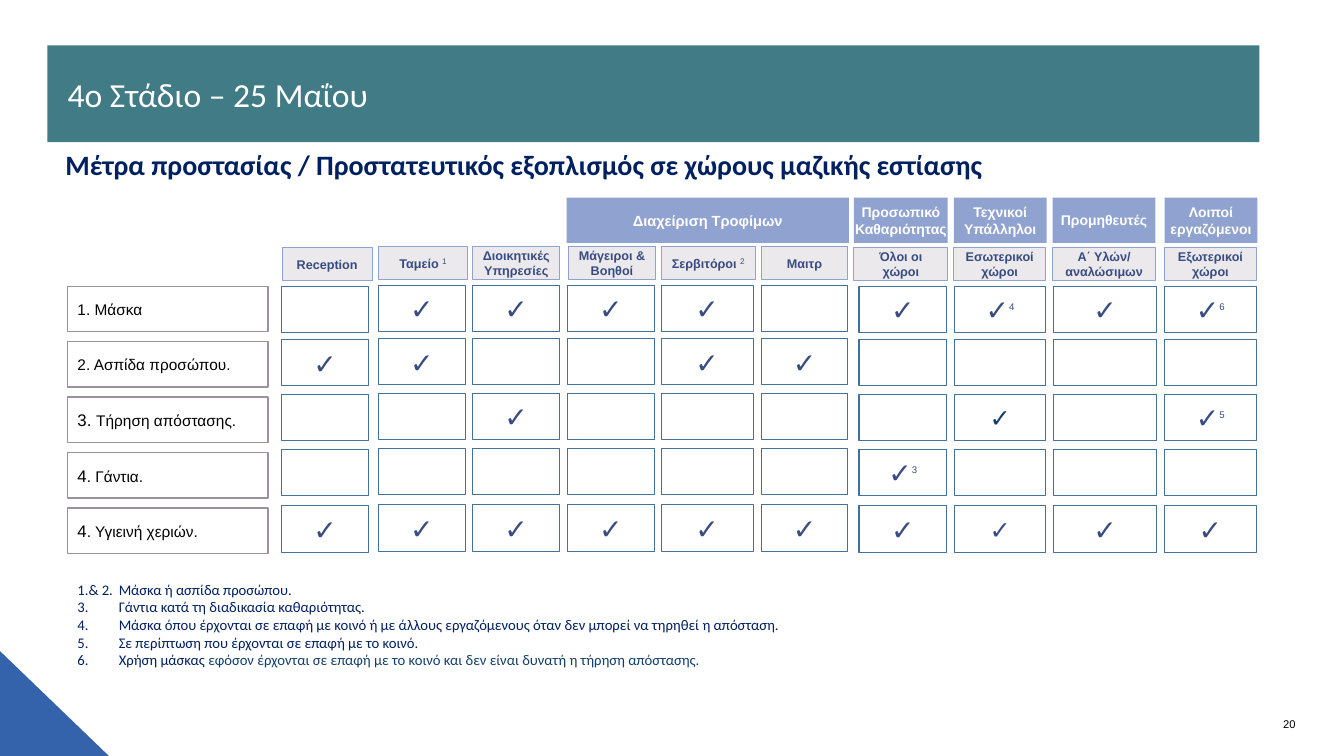
from lxml import etree
from pptx import Presentation
from pptx.dml.color import RGBColor
from pptx.enum.shapes import MSO_SHAPE
from pptx.enum.text import MSO_ANCHOR, MSO_AUTO_SIZE, PP_ALIGN
from pptx.oxml.ns import qn
from pptx.util import Inches, Pt

RECT, TRIANGLE = MSO_SHAPE.RECTANGLE, MSO_SHAPE.RIGHT_TRIANGLE
MIDDLE, BOTTOM = MSO_ANCHOR.MIDDLE, MSO_ANCHOR.BOTTOM
LEFT, CENTER, RIGHT = PP_ALIGN.LEFT, PP_ALIGN.CENTER, PP_ALIGN.RIGHT

WHITE = RGBColor(0xFF, 0xFF, 0xFF)
BLACK = RGBColor(0, 0, 0)
TEAL = RGBColor(0x41, 0x7B, 0x85)
NAVY = RGBColor(0x00, 0x20, 0x60)
BLUE = RGBColor(0x34, 0x62, 0xAB)
INK = RGBColor(0x38, 0x4C, 0x81)
DARK_BLUE = RGBColor(0x14, 0x3F, 0x6A)
PERIWINKLE = RGBColor(0x90, 0xA2, 0xCF)
PALE = RGBColor(0xEB, 0xE9, 0xEC)
MAUVE = RGBColor(0x9D, 0x90, 0xA0)
STEEL = RGBColor(0x41, 0x71, 0x9C)


def add_box(left, top, width, height, fill, line=None, line_width=0.75, kind=RECT):
    s = slide.shapes.add_shape(kind, Inches(left), Inches(top), Inches(width), Inches(height))
    s.shadow.inherit = False
    s.fill.solid()
    s.fill.fore_color.rgb = fill
    if line is None:
        s.line.fill.background()
    else:
        s.line.color.rgb = line
        s.line.width = Pt(line_width)
    s.text_frame.vertical_anchor = MIDDLE
    return s


def add_run(p, text, size, color, bold=False, font="Arial", baseline=0):
    """Append a formatted run; baseline is the superscript rise in percent."""
    r = p.add_run()
    r.text = text
    r.font.name, r.font.size, r.font.bold = font, Pt(size), bold
    r.font.color.rgb = color
    if baseline:
        r.font._element.set("baseline", str(baseline * 1000))


prs = Presentation()
prs.slide_width, prs.slide_height = Inches(13.33), Inches(7.5)
slide = prs.slides.add_slide(prs.slide_layouts[5])

# Title banner
title = slide.shapes.title
title.left, title.top, title.width, title.height = (Inches(v) for v in (0.47, 0.45, 12.02, 0.96))
geometry = etree.SubElement(title._element.spPr, qn("a:prstGeom"), prst="snip2DiagRect")
etree.SubElement(geometry, qn("a:avLst"))
title.fill.solid()
title.fill.fore_color.rgb = TEAL
tf = title.text_frame
tf.auto_size = MSO_AUTO_SIZE.NONE
tf.vertical_anchor = MIDDLE
tf.margin_left = tf.margin_right = Inches(0.2)
tf.paragraphs[0].alignment = LEFT
add_run(tf.paragraphs[0], "4o Στάδιο – 25 Μαΐου", 24, WHITE, font="Calibri")

# Corner, subtitle and page number
add_box(0, 6.46, 1.08, 1.04, BLUE, kind=TRIANGLE)

subtitle = slide.shapes.add_textbox(Inches(0.55), Inches(1.41), Inches(11.73), Inches(0.44))
subtitle.text_frame.word_wrap = True
add_run(subtitle.text_frame.paragraphs[0],
        "Μέτρα προστασίας / Προστατευτικός εξοπλισμός σε χώρους μαζικής εστίασης",
        20, NAVY, bold=True, font="Calibri")

number = slide.shapes.add_textbox(Inches(10.92), Inches(7.1), Inches(1.93), Inches(0.15))
tf = number.text_frame
tf.word_wrap = True
tf.vertical_anchor = BOTTOM
tf.margin_left = tf.margin_right = tf.margin_top = tf.margin_bottom = 0
tf.paragraphs[0].alignment = RIGHT
add_run(tf.paragraphs[0], "20", 8, BLACK)

# Staff groups
groups = [
    (5.62, 2.8, "Διαχείριση Τροφίμων", 10.5),
    (8.47, 0.93, "Προσωπικό Καθαριότητας", 10),
    (9.46, 0.92, "Τεχνικοί Υπάλληλοι", 10),
    (10.44, 1.02, "Προμηθευτές", 10),
    (11.55, 0.92, "Λοιποί εργαζόμενοι", 10),
]
for left, width, name, size in groups:
    tf = add_box(left, 1.96, width, 0.45, PERIWINKLE).text_frame
    tf.margin_left = tf.margin_right = tf.margin_top = tf.margin_bottom = 0
    tf.paragraphs[0].alignment = CENTER
    add_run(tf.paragraphs[0], name, size, WHITE, bold=True)

# Measures: number and name, with the size of the number
measures = [
    ("1", ". Μάσκα", 11),
    ("2", ". Ασπίδα προσώπου.", 11),
    ("3. ", "Τήρηση απόστασης.", 12),
    ("4", ". Γάντια.", 12),
    ("4", ". Υγιεινή χεριών.", 12),
]
for i, (digit, name, size) in enumerate(measures):
    s = add_box(0.67, 2.84 + 0.55 * i, 1.99, 0.45, WHITE, MAUVE, 1)
    p = s.text_frame.paragraphs[0]
    p.alignment = LEFT
    add_run(p, digit, size, BLACK)
    add_run(p, name, 11, BLACK)

# Roles: header left and width, cell left and width, shift down, name, note, marks by row
ROW_TOPS = (2.83, 3.36, 3.9, 4.45, 5.01)
SMALL_MARKS = {("Εσωτερικοί χώροι", 2): DARK_BLUE, ("Εσωτερικοί χώροι", 4): INK}
roles = [
    (2.8, 0.89, 2.79, 0.87, 0.01, "Reception", "", ("", "✓", "", "", "✓")),
    (3.75, 0.89, 3.75, 0.87, 0, "Ταμείο ", "1", ("✓", "✓", "", "", "✓")),
    (4.69, 0.86, 4.69, 0.86, 0, "Διοικητικές Υπηρεσίες", "", ("✓", "", "✓", "", "✓")),
    (5.64, 0.86, 5.63, 0.86, 0, "Μάγειροι & Βοηθοί", "", ("✓", "", "", "", "✓")),
    (6.56, 0.93, 6.56, 0.91, 0, "Σερβιτόροι ", "2", ("✓", "✓", "", "", "✓")),
    (7.55, 0.86, 7.55, 0.86, 0, "Μαιτρ", "", ("", "✓", "", "", "✓")),
    (8.47, 0.93, 8.52, 0.87, 0.01, "Όλοι οι χώροι", "", ("✓", "", "", "✓3", "✓")),
    (9.46, 0.91, 9.47, 0.9, 0.01, "Εσωτερικοί χώροι", "", ("✓4", "", "✓", "", "✓")),
    (10.44, 1.02, 10.45, 1.02, 0.01, "Α΄ Υλών/ αναλώσιμων", "", ("✓", "", "", "", "✓")),
    (11.55, 0.91, 11.55, 0.91, 0.01, "Εξωτερικοί χώροι", "", ("✓6", "", "✓5", "", "✓")),
]
for head_left, head_width, left, width, shift, name, note, marks in roles:
    p = add_box(head_left, 2.45 + shift, head_width, 0.32, PALE, PERIWINKLE).text_frame.paragraphs[0]
    p.alignment = CENTER
    add_run(p, name, 9, INK, bold=True)
    if note:
        add_run(p, note, 10, INK, baseline=30)
    for row, (top, mark) in enumerate(zip(ROW_TOPS, marks)):
        s = add_box(left, top + shift, width, 0.46, WHITE, STEEL)
        if mark:
            small = SMALL_MARKS.get((name, row))
            p = s.text_frame.paragraphs[0]
            p.alignment = CENTER
            add_run(p, mark[0], 18 if small else 20, small or INK)
            if mark[1:]:
                add_run(p, mark[1:], 12, INK, baseline=60)

# Footnotes: the first carries its own numbers, the rest count from 3
footnotes = [
    ("1.& 2.\tΜάσκα ή ασπίδα προσώπου.", ""),
    ("Γάντια κατά τη διαδικασία καθαριότητας.", ""),
    ("Μάσκα όπου έρχονται σε επαφή με κοινό ή με άλλους εργαζόμενους "
     "όταν δεν μπορεί να τηρηθεί η απόσταση.", ""),
    ("Σε περίπτωση που έρχονται σε επαφή με το κοινό.", ""),
    ("Χρήση μάσκας ",
     "εφόσον έρχονται σε επαφή με το κοινό και δεν είναι δυνατή η τήρηση απόστασης."),
]
notes_box = slide.shapes.add_textbox(Inches(0.67), Inches(5.71), Inches(7.57), Inches(0.98))
tf = notes_box.text_frame
tf.word_wrap = True
for i, (text, ending) in enumerate(footnotes):
    p = tf.add_paragraph() if i else tf.paragraphs[0]
    pPr = p._p.get_or_add_pPr()
    pPr.set("marL", str(Inches(0.41)))
    pPr.set("indent", str(-Inches(0.41)))
    if i:
        etree.SubElement(pPr, qn("a:buFont"), typeface="+mj-lt")
        etree.SubElement(pPr, qn("a:buAutoNum"), type="arabicPeriod", startAt="3")
    add_run(p, text, 10.5, NAVY, font="Calibri")
    if ending:
        add_run(p, ending, 10.5, DARK_BLUE, font="Calibri")

prs.save("out.pptx")
